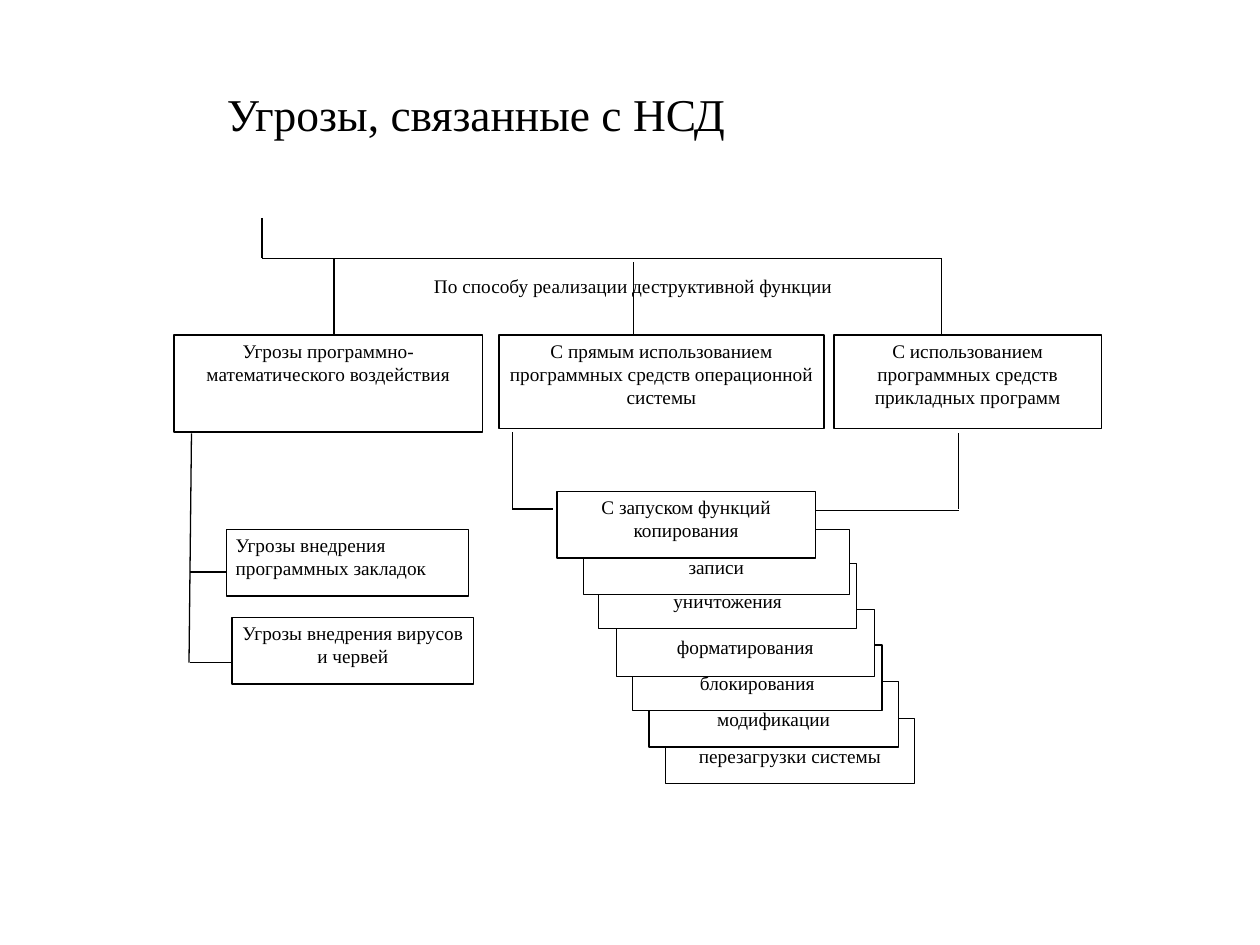
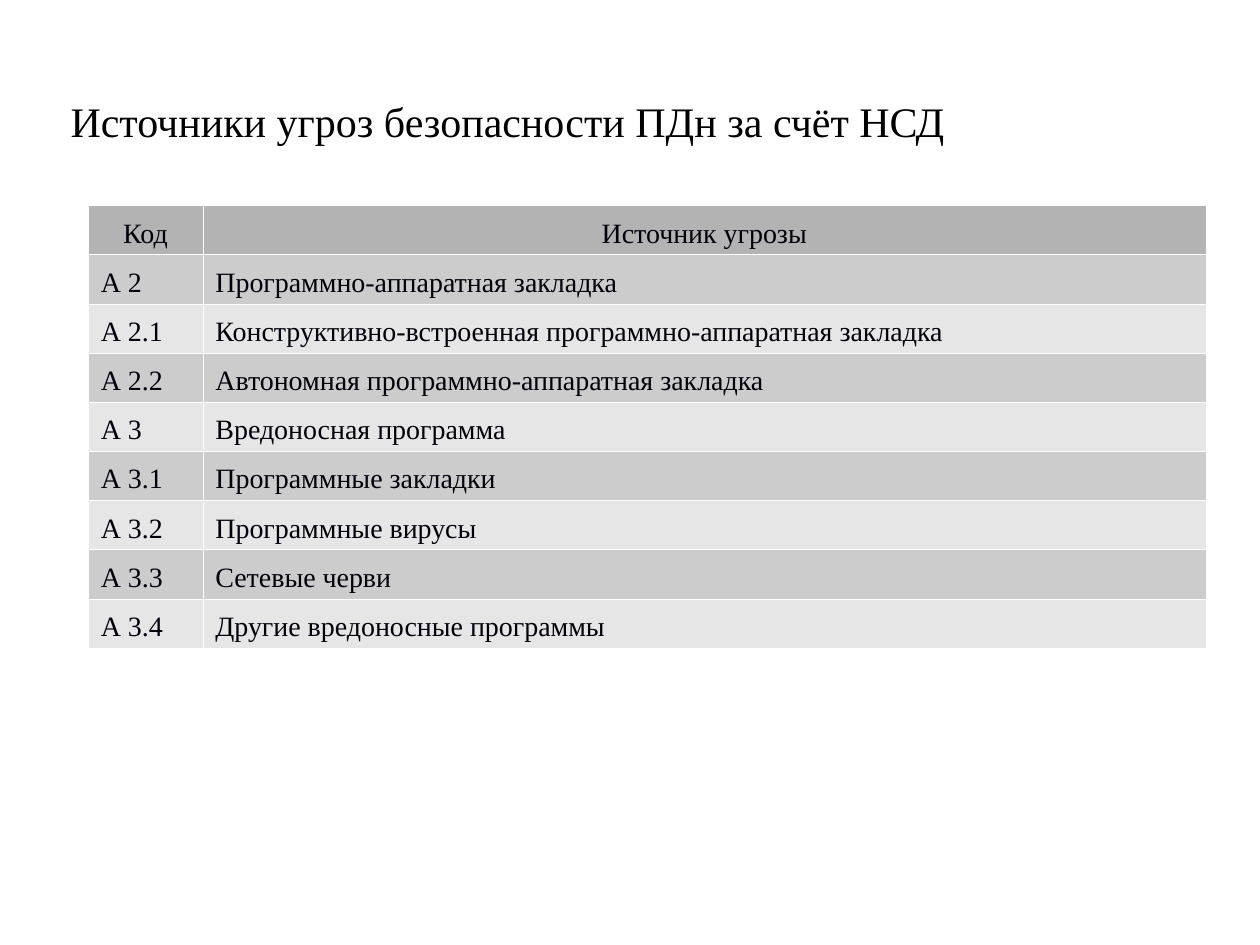
"""Build two slides on threats from unauthorised access: a tree and a table."""
import lxml.etree
import pptx
import pptx.dml.color
import pptx.enum.shapes
import pptx.enum.text
import pptx.oxml.ns
import pptx.util

FONT = "Times New Roman"
BLACK, WHITE, INK = "000000", "FFFFFF", "00000A"
HEAD, BANDS = "B3B3B3", ("CCCCCC", "E6E6E6")
LEFT, MID = pptx.enum.text.PP_ALIGN.LEFT, pptx.enum.text.PP_ALIGN.CENTER
PAD = (0.07, 0.03)
SIZE = 11
LOW = PAD[1] + SIZE * 1.15 / 72

TREE = {
    "title": ("Угрозы, связанные с НСД", (0.39, 0.63, 6.78, 0.79), 26, MID),
    "label": ("По способу реализации деструктивной функции", (2.84, 2.15, 4.37, 0.3)),
    "boxes": [
        ("Угрозы программно-математического воздействия", (1.38, 2.66, 2.45, 0.77), MID),
        ("С прямым использованием программных средств операционной системы",
         (3.96, 2.66, 2.58, 0.74), MID),
        ("С использованием программных средств прикладных программ",
         (6.62, 2.66, 2.12, 0.74), MID),
        ("Угрозы внедрения программных закладок", (1.8, 4.2, 1.92, 0.53), LEFT),
        ("Угрозы внедрения вирусов и червей", (1.84, 4.9, 1.92, 0.53), MID),
    ],
    "stack": [
        ("С запуском функций копирования", (4.42, 3.9, 2.05, 0.53), PAD[1]),
        ("записи", (4.63, 4.2, 2.11, 0.52), LOW),
        ("уничтожения", (4.75, 4.47, 2.05, 0.52), LOW),
        ("форматирования", (4.89, 4.84, 2.05, 0.53), LOW),
        ("блокирования", (5.02, 5.12, 1.98, 0.52), LOW),
        ("модификации", (5.15, 5.41, 1.98, 0.52), LOW),
        ("перезагрузки системы", (5.28, 5.7, 1.98, 0.52), LOW),
    ],
    "lines": [
        (2.08, 1.73, 2.08, 2.05), (2.08, 2.05, 7.47, 2.05),
        (2.65, 2.05, 2.65, 2.66), (5.03, 2.08, 5.03, 2.65), (7.47, 2.05, 7.47, 2.66),
        (1.52, 3.44, 1.5, 5.26), (1.51, 4.54, 1.8, 4.54), (1.51, 5.26, 1.83, 5.26),
        (4.07, 3.43, 4.07, 4.05), (4.07, 4.04, 4.39, 4.04),
        (7.61, 3.44, 7.61, 4.04), (7.61, 4.05, 6.47, 4.05),
    ],
}

LIST = {
    "title": ("Источники угроз безопасности ПДн за счёт НСД", (0.46, 0.71, 8.91, 0.71), 24, LEFT),
    "spot": (0.7, 1.63),
    "cols": (0.91, 7.96),
    "high": 0.39,
    "rows": [
        ("Код", "Источник угрозы"),
        ("А 2", "Программно-аппаратная закладка"),
        ("А 2.1", "Конструктивно-встроенная программно-аппаратная закладка"),
        ("А 2.2", "Автономная программно-аппаратная закладка"),
        ("А 3", "Вредоносная программа"),
        ("А 3.1", "Программные закладки"),
        ("А 3.2", "Программные вирусы"),
        ("А 3.3", "Сетевые черви"),
        ("А 3.4", "Другие вредоносные программы"),
    ],
}


def inch(nums):
    return [pptx.util.Inches(num) for num in nums]


def tint(code):
    return pptx.dml.color.RGBColor.from_string(code)


def paint(thing, code):
    thing.fill.solid()
    thing.fill.fore_color.rgb = tint(code)


def stroke(shape):
    shape.line.color.rgb = tint(BLACK)
    shape.line.width = pptx.util.Pt(0.75)


def pad(thing, side, top, base):
    thing.margin_left = thing.margin_right = pptx.util.Inches(side)
    thing.margin_top, thing.margin_bottom = inch((top, base))


def write(frame, text, size, align, code=BLACK):
    para = frame.paragraphs[0]
    para.alignment = align
    run = para.add_run()
    run.text = text
    run.font.name = FONT
    run.font.size = pptx.util.Pt(size)
    run.font.color.rgb = tint(code)
    return para


def fill(shape, text, size, align, side, top, base):
    frame = shape.text_frame
    frame.word_wrap = True
    frame.auto_size = pptx.enum.text.MSO_AUTO_SIZE.NONE
    frame.vertical_anchor = pptx.enum.text.MSO_ANCHOR.TOP
    pad(frame, side, top, base)
    write(frame, text, size, align)


def start(deck, title):
    text, place, size, align = title
    slide = deck.slides.add_slide(deck.slide_layouts[5])
    shape = slide.shapes.title
    shape.left, shape.top, shape.width, shape.height = inch(place)
    fill(shape, text, size, align, 0.1, 0.05, 0.05)
    return slide


def box(slide, text, place, align=MID, top=PAD[1]):
    kind = pptx.enum.shapes.MSO_SHAPE.RECTANGLE
    shape = slide.shapes.add_shape(kind, *inch(place))
    shape.shadow.inherit = False
    paint(shape, WHITE)
    stroke(shape)
    fill(shape, text, SIZE, align, PAD[0], top, PAD[1])


def link(slide, ends):
    kind = pptx.enum.shapes.MSO_CONNECTOR.STRAIGHT
    line = slide.shapes.add_connector(kind, *inch(ends))
    stroke(line)
    lxml.etree.SubElement(line._element.spPr, pptx.oxml.ns.qn("a:effectLst"))


def edge(cell):
    props = cell._tc.get_or_add_tcPr()
    for spot, side in enumerate(("lnL", "lnR", "lnT", "lnB")):
        line = props.makeelement(pptx.oxml.ns.qn("a:" + side), {"w": str(pptx.util.Pt(0.06))})
        solid = lxml.etree.SubElement(line, pptx.oxml.ns.qn("a:solidFill"))
        lxml.etree.SubElement(solid, pptx.oxml.ns.qn("a:srgbClr"), val=WHITE)
        props.insert(spot, line)


def tree(deck):
    slide = start(deck, TREE["title"])
    text, place = TREE["label"]
    label = slide.shapes.add_textbox(*inch(place))
    fill(label, text, SIZE, MID, *PAD, PAD[1])
    for text, place, align in TREE["boxes"]:
        box(slide, text, place, align)
    for text, place, top in reversed(TREE["stack"]):
        box(slide, text, place, top=top)
    for ends in TREE["lines"]:
        link(slide, ends)


def chart(deck):
    slide = start(deck, LIST["title"])
    rows, cols = LIST["rows"], LIST["cols"]
    place = (*LIST["spot"], sum(cols), LIST["high"] * len(rows))
    grid = slide.shapes.add_table(len(rows), len(cols), *inch(place)).table
    for col, width in zip(grid.columns, inch(cols)):
        col.width = width
    for at, row in enumerate(rows):
        grid.rows[at].height = pptx.util.Inches(LIST["high"])
        for cell, text in zip(grid.rows[at].cells, row):
            paint(cell, BANDS[(at - 1) % 2] if at else HEAD)
            edge(cell)
            pad(cell, 0.1, 0.14, 0.05)
            para = write(cell.text_frame, text, 16, LEFT if at else MID, INK)
            para.line_spacing = 0.81
            para.runs[0].font.bold = False


def main():
    deck = pptx.Presentation()
    deck.slide_width, deck.slide_height = inch((10, 7.5))
    tree(deck)
    chart(deck)
    deck.save("out.pptx")


if __name__ == "__main__":
    main()
